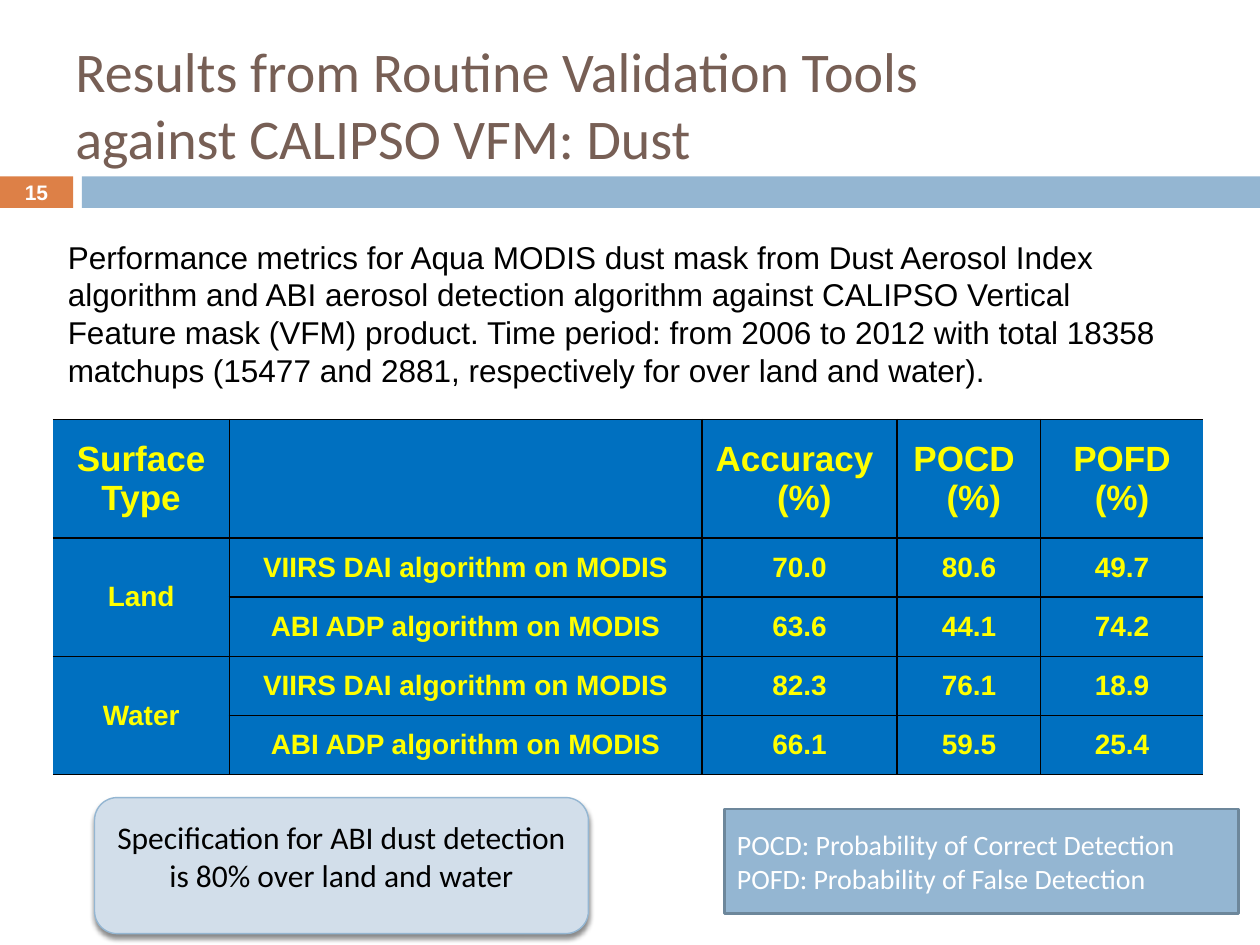
from lxml import etree
from pptx import Presentation
from pptx.dml.color import RGBColor
from pptx.enum.shapes import MSO_SHAPE
from pptx.enum.text import MSO_ANCHOR, PP_ALIGN
from pptx.oxml import parse_xml
from pptx.oxml.ns import nsdecls, qn
from pptx.util import Inches, Pt

RECT, ROUND = MSO_SHAPE.RECTANGLE, MSO_SHAPE.ROUNDED_RECTANGLE
LEFT, CENTER = PP_ALIGN.LEFT, PP_ALIGN.CENTER
MIDDLE = MSO_ANCHOR.MIDDLE

COLORS = {
    "title": "775F55", "orange": "DD8047", "bar": "94B6D2",
    "legend_line": "6D879B", "note": "D2DEEA", "cell": "0070C0",
    "cell_text": "FFFF00", "black": "000000", "white": "FFFFFF",
}

HEADERS = ["Surface\nType", "", "Accuracy \n (%)", "POCD \n (%)", "POFD\n(%)"]
ROWS = [
    ["Land", "VIIRS DAI algorithm on MODIS", "70.0", "80.6", "49.7"],
    ["", "ABI ADP algorithm on MODIS", "63.6", "44.1", "74.2"],
    ["Water", "VIIRS DAI algorithm on MODIS", "82.3", "76.1", "18.9"],
    ["", "ABI ADP algorithm on MODIS", "66.1", "59.5", "25.4"],
]
COL_WIDTHS = [1.4, 3.75, 1.55, 1.14, 1.29]
HEADER_HEIGHT, ROW_HEIGHT = 0.94, 0.47


def rgb(name):
    return RGBColor.from_string(COLORS[name])


def write(tf, text, size=18, font="Arial", color="black", bold=False, align=LEFT):
    """Fill a text frame, one paragraph for each line of text."""
    for i, line in enumerate(text.split("\n")):
        p = tf.paragraphs[0] if i == 0 else tf.add_paragraph()
        p.alignment = align
        r = p.add_run()
        r.text = line
        r.font.size, r.font.name, r.font.bold = Pt(size), font, bold
        r.font.color.rgb = rgb(color)


def add_text(s, box, text, **fmt):
    tf = s.shapes.add_textbox(*map(Inches, box)).text_frame
    tf.word_wrap = True
    tf.vertical_anchor = MIDDLE
    write(tf, text, **fmt)


def add_panel(s, box, fill, kind=RECT, line=None, width=1):
    sp = s.shapes.add_shape(kind, *map(Inches, box))
    sp.shadow.inherit = False
    sp.fill.solid()
    sp.fill.fore_color.rgb = rgb(fill)
    if line:
        sp.line.color.rgb = rgb(line)
        sp.line.width = Pt(width)
    else:
        sp.line.fill.background()
    sp.text_frame.word_wrap = True
    sp.text_frame.vertical_anchor = MIDDLE
    return sp


def add_header(s, x, y, w, h):
    # Title above the page number and bar
    band_y, band_h, number_w, gap = y + h, 0.25, 0.58, 0.07
    bar_x = x + number_w + gap
    add_text(s, (x + 0.5, y, 8.58, h), "Results from Routine Validation Tools\n"
             "against CALIPSO VFM: Dust", size=32, font="Calibri", color="title")
    number = add_panel(s, (x, band_y, number_w, band_h), "orange")
    number.text_frame.margin_top = number.text_frame.margin_bottom = 0
    write(number.text_frame, "15", size=12, color="white", bold=True, align=CENTER)
    add_panel(s, (bar_x, band_y, x + w - bar_x, band_h), "bar")


def set_borders(cell, sides):
    """Draw the named sides in black and clear the others."""
    tc_pr = cell._tc.get_or_add_tcPr()
    for i, side in enumerate("LRTB"):
        ln = etree.Element(qn(f"a:ln{side}"), w=str(Pt(1)))
        if side in sides:
            fill = etree.SubElement(ln, qn("a:solidFill"))
            etree.SubElement(fill, qn("a:srgbClr"), val=COLORS["black"])
        else:
            etree.SubElement(ln, qn("a:noFill"))
        tc_pr.insert(i, ln)


def add_metrics_table(s, x, y, w, h):
    data = [HEADERS] + ROWS
    last = len(HEADERS) - 1
    table = s.shapes.add_table(len(data), len(HEADERS),
                               *map(Inches, (x, y, w, h))).table
    table.horz_banding = False
    for column, width in zip(table.columns, COL_WIDTHS):
        column.width = Inches(width)
    for i, values in enumerate(data):
        table.rows[i].height = Inches(ROW_HEIGHT if i else HEADER_HEIGHT)
        for j, text in enumerate(values):
            cell = table.cell(i, j)
            cell.fill.solid()
            cell.fill.fore_color.rgb = rgb("cell")
            cell.vertical_anchor = MIDDLE
            cell.margin_left = cell.margin_right = Inches(0.07)
            cell.margin_top = cell.margin_bottom = 0
            set_borders(cell, "TB" + "L" * (j > 0) + "R" * (j < last))
            if text:
                write(cell.text_frame, text, size=16 if i else 20,
                      color="cell_text", bold=True, align=CENTER)
    # Each surface type spans its two algorithms
    for i in (1, 3):
        table.cell(i, 0).merge(table.cell(i + 1, 0))


def add_legend(s, *box):
    sp = add_panel(s, box, "bar", line="legend_line", width=1.5)
    write(sp.text_frame, "POCD: Probability of Correct Detection\n"
          "POFD: Probability of False Detection",
          size=16, font="Calibri", color="white")


def add_note(s, *box):
    sp = add_panel(s, box, "note", kind=ROUND, line="bar", width=0.79)
    sp.text_frame.margin_bottom = Inches(0.2)
    write(sp.text_frame, "Specification for ABI dust detection is 80% over land and water",
          font="Calibri", align=CENTER)
    # Soft shadow straight below
    effects = sp._element.spPr.find(qn("a:effectLst"))
    effects.append(parse_xml(
        f'<a:outerShdw {nsdecls("a")} blurRad="{Pt(3)}" dist="{Pt(2.4)}" '
        f'dir="5400000" rotWithShape="0"><a:srgbClr val="{COLORS["black"]}">'
        '<a:alpha val="45000"/></a:srgbClr></a:outerShdw>'))


def main():
    prs = Presentation()
    prs.slide_width, prs.slide_height = Inches(10), Inches(7.5)
    s = prs.slides.add_slide(prs.slide_layouts[6])
    add_header(s, 0, 0.25, 10, 1.15)
    add_metrics_table(s, 0.42, 3.33, sum(COL_WIDTHS),
                      HEADER_HEIGHT + len(ROWS) * ROW_HEIGHT)
    add_text(s, (0.44, 1.83, 8.9, 1.31),
             "Performance metrics for Aqua MODIS dust mask from Dust Aerosol Index "
             "algorithm and ABI aerosol detection algorithm against CALIPSO Vertical "
             "Feature mask (VFM) product. Time period: from 2006 to 2012 with total "
             "18358 matchups (15477 and 2881, respectively for over land and water).")
    add_legend(s, 5.75, 6.42, 4.08, 0.83)
    add_note(s, 0.75, 6.33, 3.92, 1.08)
    prs.save("out.pptx")


if __name__ == "__main__":
    main()
